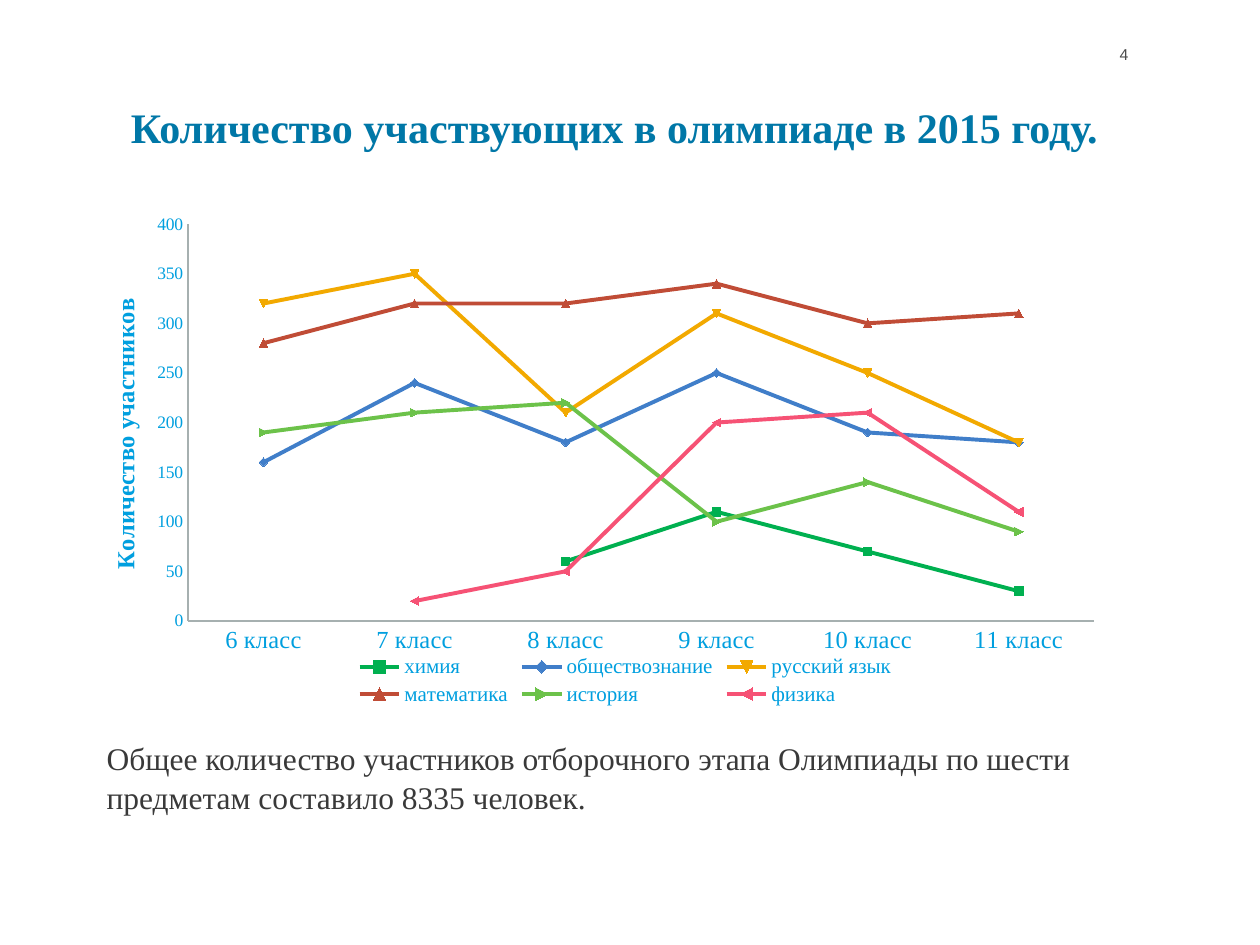
"""Build a slide with a line chart of olympiad participants by grade."""
from dataclasses import dataclass
from typing import Optional

import lxml.etree
import pptx
import pptx.chart.data
import pptx.dml.color
import pptx.enum.chart
import pptx.enum.text
import pptx.oxml
import pptx.oxml.ns
import pptx.util
from pptx.util import Cm

COLORS = {
    "title": "0077A7", "body": "393939", "number": "4C4C4C",
    "chart": "009FDF", "axis": "A6B0B0", "highlight": "5BCBF5",
    "green": "00B050", "blue": "407EC9", "amber": "F2A900",
    "brick": "C04C36", "lime": "6CC24A", "pink": "F65275",
}
SERIF = "Times New Roman"
GRADES = [f"{n} класс" for n in range(6, 12)]


@dataclass
class Subject:
    name: str
    color: str
    values: tuple[Optional[int], ...]
    highlighted: tuple[int, ...] = ()


SUBJECTS = [
    Subject("химия", "green", (None, None, 60, 110, 70, 30), (3, 4, 5)),
    Subject("обществознание", "blue", (160, 240, 180, 250, 190, 180)),
    Subject("русский язык", "amber", (320, 350, 210, 310, 250, 180)),
    Subject("математика", "brick", (280, 320, 320, 340, 300, 310)),
    Subject("история", "lime", (190, 210, 220, 100, 140, 90)),
    Subject("физика", "pink", (None, 20, 50, 200, 210, 110)),
]


def rgb(name: str) -> pptx.dml.color.RGBColor:
    return pptx.dml.color.RGBColor.from_string(COLORS[name])


def style_font(font, size: float, color: str, name: str = SERIF, bold: bool = False) -> None:
    font.name, font.size, font.bold = name, pptx.util.Pt(size), bold
    font.color.rgb = rgb(color)


def fill_text(sp, text: str, size: float, color: str, name: str = SERIF,
              bold: bool = False, inset: Optional[float] = None):
    tf = sp.text_frame
    tf.text = text
    tf.word_wrap = True
    tf.auto_size = pptx.enum.text.MSO_AUTO_SIZE.NONE
    tf.vertical_anchor = pptx.enum.text.MSO_ANCHOR.TOP
    if inset is not None:
        tf.margin_left = tf.margin_top = tf.margin_right = tf.margin_bottom = Cm(inset)
    p = tf.paragraphs[0]
    p.alignment = pptx.enum.text.PP_ALIGN.LEFT
    style_font(p.runs[0].font, size, color, name, bold)
    return p


def set_plot_layout(chart, x: float, y: float, w: float, h: float) -> None:
    area = chart.element.find(".//" + pptx.oxml.ns.qn("c:plotArea"))
    old = area.find(pptx.oxml.ns.qn("c:layout"))
    if old is not None:
        area.remove(old)
    layout = lxml.etree.Element(pptx.oxml.ns.qn("c:layout"))
    manual = lxml.etree.SubElement(layout, pptx.oxml.ns.qn("c:manualLayout"))
    settings = {"layoutTarget": "inner", "xMode": "edge", "yMode": "edge",
                "x": x, "y": y, "w": w, "h": h}
    for tag, value in settings.items():
        lxml.etree.SubElement(manual, pptx.oxml.ns.qn(f"c:{tag}"), val=str(value))
    area.insert(0, layout)


def style_series(series, subject: Subject) -> None:
    series.smooth = False
    series.format.line.color.rgb = rgb(subject.color)
    series.format.line.width = pptx.util.Pt(2.25)
    marked = [(series, subject.color)]
    marked += [(series.points[i], "highlight") for i in subject.highlighted]
    for item, color in marked:
        item.marker.size = 5
        item.marker.format.fill.solid()
        item.marker.format.fill.fore_color.rgb = rgb(color)
        item.marker.format.line.color.rgb = rgb(color)
    for i in subject.highlighted:
        line = series.points[i].format.line
        line.color.rgb = rgb(subject.color)
        line.width = pptx.util.Pt(2.25)


def style_axis(axis, size: float) -> None:
    axis.has_major_gridlines = False
    axis.major_tick_mark = axis.minor_tick_mark = pptx.enum.chart.XL_TICK_MARK.NONE
    axis.format.line.color.rgb = rgb("axis")
    style_font(axis.tick_labels.font, size, "chart")


def add_participants_chart(s) -> None:
    data = pptx.chart.data.CategoryChartData()
    data.categories = GRADES
    for subject in SUBJECTS:
        data.add_series(subject.name, subject.values)
    chart = s.shapes.add_chart(pptx.enum.chart.XL_CHART_TYPE.LINE_MARKERS,
                               Cm(2.11), Cm(4.32), Cm(21), Cm(10), data).chart
    style_font(chart.font, 10, "chart", "Arial")
    chart.has_title = False
    chart.plots[0].vary_by_categories = False
    for series, subject in zip(chart.plots[0].series, SUBJECTS):
        style_series(series, subject)
    style_axis(chart.category_axis, 14)
    axis = chart.value_axis
    style_axis(axis, 10)
    axis.minimum_scale, axis.maximum_scale, axis.major_unit = 0, 400, 50
    tf = axis.axis_title.text_frame
    tf.text = "Количество участников"
    style_font(tf.paragraphs[0].runs[0].font, 14, "chart", bold=True)
    chart.has_legend = True
    chart.legend.position = pptx.enum.chart.XL_LEGEND_POSITION.BOTTOM
    chart.legend.include_in_layout = False
    style_font(chart.legend.font, 12, "chart")
    set_plot_layout(chart, 0.08, 0.02, 0.87, 0.8)


def main() -> None:
    prs = pptx.Presentation()
    prs.slide_width, prs.slide_height = Cm(25.4), Cm(19.05)
    s = prs.slides.add_slide(prs.slide_layouts[5])

    number = s.shapes.add_textbox(Cm(20.62), Cm(0.91), Cm(2.13), Cm(0.91))
    p = fill_text(number, "4", 9, "number", "Arial", inset=0)
    p.alignment = pptx.enum.text.PP_ALIGN.RIGHT

    title = s.shapes.title
    title.left, title.top, title.width, title.height = Cm(2.64), Cm(2.26), Cm(20.1), Cm(2.26)
    p = fill_text(title, "Количество участвующих в олимпиаде в 2015 году.", 24,
                  "title", bold=True, inset=0)
    p.line_spacing = pptx.util.Pt(22.5)

    add_participants_chart(s)

    summary = s.shapes.add_textbox(Cm(1.9), Cm(14.73), Cm(21.8), Cm(1.8))
    p = fill_text(summary, "Общее количество участников отборочного этапа Олимпиады "
                  "по шести предметам составило 8335 человек.", 18, "body")
    p.line_spacing = 1.05
    prs.save("out.pptx")


if __name__ == "__main__":
    main()
